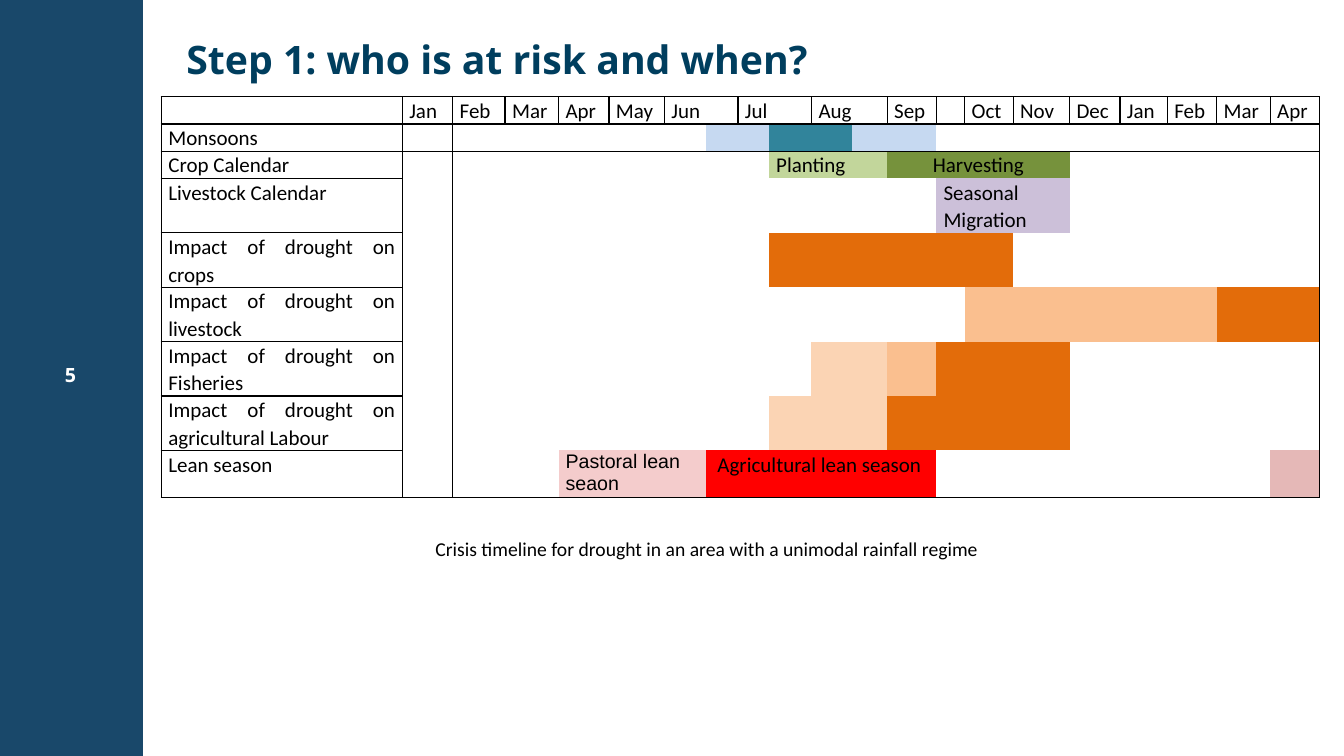
import pptx
import pptx.util
import pptx.oxml.ns
from lxml import etree
from pptx.dml.color import RGBColor
from pptx.enum.shapes import MSO_SHAPE
from pptx.enum.text import MSO_ANCHOR, PP_ALIGN
from pptx.util import Inches

NAVY = RGBColor(0x19, 0x48, 0x6A)
TITLE_BLUE = RGBColor(0x00, 0x3E, 0x5E)
WHITE = RGBColor(0xFF, 0xFF, 0xFF)
BLACK = RGBColor(0x00, 0x00, 0x00)
LIGHT_RAIN = RGBColor(0xC6, 0xD9, 0xF1)
HEAVY_RAIN = RGBColor(0x31, 0x84, 0x9B)
PLANTING = RGBColor(0xC2, 0xD6, 0x9B)
HARVEST = RGBColor(0x76, 0x92, 0x3C)
MIGRATION = RGBColor(0xCC, 0xC0, 0xD9)
LOW_IMPACT = RGBColor(0xFB, 0xD4, 0xB4)
MID_IMPACT = RGBColor(0xFA, 0xBF, 0x8F)
HIGH_IMPACT = RGBColor(0xE3, 0x6C, 0x0A)
PASTORAL = RGBColor(0xF4, 0xCC, 0xCC)
LEAN = RGBColor(0xFF, 0x00, 0x00)
NEXT_LEAN = RGBColor(0xE5, 0xB8, 0xB7)

BODY = {"name": "Calibri", "size": pptx.util.Pt(15), "color": BLACK}
SMALL = {"name": "Arial", "size": pptx.util.Pt(14), "color": BLACK}
CAPTION = {"name": "Calibri", "size": pptx.util.Pt(14), "color": BLACK}
TITLE = {"name": "Open Sans", "size": pptx.util.Pt(28), "bold": True, "color": TITLE_BLUE}
NUMBER = {"name": "Open Sans", "size": pptx.util.Pt(14), "bold": True, "color": WHITE}

# text, (left, top, width, height), format, alignment, anchor, line spacing
TEXTS = [
    ("Step 1: who is at risk and when?", (1.75, 0.15, 11.22, 0.92), TITLE,
     PP_ALIGN.LEFT, MSO_ANCHOR.MIDDLE, 0.9),
    ("5", (0.39, 3.55, 0.62, 0.4), NUMBER, PP_ALIGN.CENTER, MSO_ANCHOR.TOP, 1.0),
    ("Crisis timeline for drought in an area with a unimodal rainfall regime",
     (4.22, 5.28, 6.67, 0.34), CAPTION, PP_ALIGN.LEFT, MSO_ANCHOR.TOP, 1.0),
]

COLUMN_WIDTHS = [2.39, 0.5, 0.52, 0.53, 0.5, 0.55, 0.41, 0.32, 0.31, 0.42, 0.4,
                 0.35, 0.49, 0.28, 0.48, 0.56, 0.5, 0.47, 0.49, 0.53, 0.49]
HEADER_HEIGHT = 0.27

# month, columns it covers
MONTHS = [("", 1), ("Jan", 1), ("Feb", 1), ("Mar", 1), ("Apr", 1), ("May", 1),
          ("Jun", 2), ("Jul", 2), ("Aug", 2), ("Sep", 1), ("", 1), ("Oct", 1),
          ("Nov", 1), ("Dec", 1), ("Jan", 1), ("Feb", 1), ("Mar", 1), ("Apr", 1)]

# label, row height, bars as (first column, last column, colour, text)
SEASONS = [
    ("Monsoons", 0.27, [(7, 8, LIGHT_RAIN, ""), (9, 10, HEAVY_RAIN, ""),
                        (11, 12, LIGHT_RAIN, "")]),
    ("Crop Calendar", 0.27, [(9, 11, PLANTING, "Planting"),
                             (12, 15, HARVEST, "Harvesting")]),
    ("Livestock Calendar", 0.54, [(13, 15, MIGRATION, "Seasonal Migration")]),
    ("Impact of drought on crops", 0.54, [(9, 14, HIGH_IMPACT, "")]),
    ("Impact of drought on livestock", 0.54, [(14, 18, MID_IMPACT, ""),
                                              (19, 20, HIGH_IMPACT, "")]),
    ("Impact of drought on Fisheries", 0.54, [(10, 11, LOW_IMPACT, ""),
                                              (12, 12, MID_IMPACT, ""),
                                              (13, 15, HIGH_IMPACT, "")]),
    ("Impact of drought on agricultural Labour", 0.54, [(9, 11, LOW_IMPACT, ""),
                                                        (12, 15, HIGH_IMPACT, "")]),
    ("Lean season", 0.47, [(4, 6, PASTORAL, "Pastoral lean seaon"),
                           (7, 12, LEAN, " Agricultural lean season"),
                           (20, 20, NEXT_LEAN, "")]),
]
# bars set apart from the justified body text: format, alignment, line spacing
BAR_STYLES = {
    "Harvesting": (BODY, PP_ALIGN.CENTER, 1.07),
    "Pastoral lean seaon": (SMALL, PP_ALIGN.LEFT, 1.0),
}
BODY_STYLE = (BODY, PP_ALIGN.JUSTIFY, 1.07)


def write(frame, text, style, alignment, spacing):
    para = frame.paragraphs[0]
    para.alignment = alignment
    para.line_spacing = spacing
    span = para.add_run()
    span.text = text
    for name, value in style.items():
        if name == "color":
            span.font.color.rgb = value
        else:
            setattr(span.font, name, value)


def prepare_cell(cell, sides):
    """Clear the cell's fill, tighten it, and rule the given sides (L, R, T, B)."""
    cell.margin_left = cell.margin_right = Inches(0.07)
    cell.margin_top = cell.margin_bottom = 0
    qn = pptx.oxml.ns.qn
    properties = cell._tc.get_or_add_tcPr()
    for side in sides:
        line = etree.SubElement(properties, qn("a:ln" + side), w="12700")
        fill = etree.SubElement(line, qn("a:solidFill"))
        etree.SubElement(fill, qn("a:srgbClr"), val=str(BLACK))
    cell.fill.background()


def shrink_empty(cell):
    """Keep the blank line of an empty cell from stretching its row."""
    if not cell.text_frame.text:
        para = cell.text_frame.paragraphs[0]
        etree.SubElement(para._p, pptx.oxml.ns.qn("a:endParaRPr"), sz="1000")


def add_calendar(page):
    heights = [HEADER_HEIGHT] + [height for _, height, _ in SEASONS]
    last_row, last_column = len(heights) - 1, len(COLUMN_WIDTHS) - 1
    table = page.shapes.add_table(
        len(heights), len(COLUMN_WIDTHS), Inches(1.6), Inches(0.96),
        Inches(sum(COLUMN_WIDTHS)), Inches(sum(heights))).table
    table.first_row = table.horz_banding = False
    style_id = table._tbl.tblPr.find(pptx.oxml.ns.qn("a:tableStyleId"))
    style_id.text = "{2D5ABB26-0587-4C30-8999-92F81FD0307C}"
    for column, width in zip(table.columns, COLUMN_WIDTHS):
        column.width = Inches(width)
    for row, height in zip(table.rows, heights):
        row.height = Inches(height)

    for r in range(last_row + 1):
        for c in range(last_column + 1):
            framed = r == 0 or c == 0
            sides = [side for side, ruled in (
                ("L", framed or c == 1), ("R", framed or c == last_column),
                ("T", framed or r == 1), ("B", framed or r == last_row)) if ruled]
            prepare_cell(table.cell(r, c), sides)

    first = 0
    for month, width in MONTHS:
        cell = table.cell(0, first)
        if width > 1:
            cell.merge(table.cell(0, first + width - 1))
        if month:
            write(cell.text_frame, month, *BODY_STYLE)
        first += width

    for r, (label, _, bars) in enumerate(SEASONS, start=1):
        write(table.cell(r, 0).text_frame, label, *BODY_STYLE)
        for start, end, colour, text in bars:
            for c in range(start, end + 1):
                fill = table.cell(r, c).fill
                fill.solid()
                fill.fore_color.rgb = colour
            if text:
                cell = table.cell(r, start)
                cell.merge(table.cell(r, end))
                write(cell.text_frame, text, *BAR_STYLES.get(text, BODY_STYLE))

    for cell in table.iter_cells():
        shrink_empty(cell)


def main():
    deck = pptx.Presentation()
    deck.slide_width, deck.slide_height = Inches(13.33), Inches(7.5)
    page = deck.slides.add_slide(deck.slide_layouts[6])
    page.background.fill.solid()
    page.background.fill.fore_color.rgb = NAVY

    panel = page.shapes.add_shape(
        MSO_SHAPE.RECTANGLE, Inches(1.42), 0, Inches(11.91), Inches(7.5))
    panel.shadow.inherit = False
    panel.fill.solid()
    panel.fill.fore_color.rgb = WHITE
    panel.line.fill.background()

    for text, place, style, alignment, anchor, spacing in TEXTS:
        box = page.shapes.add_textbox(*map(Inches, place))
        box.text_frame.word_wrap = True
        box.text_frame.vertical_anchor = anchor
        write(box.text_frame, text, style, alignment, spacing)
    add_calendar(page)
    deck.save("out.pptx")


if __name__ == "__main__":
    main()
